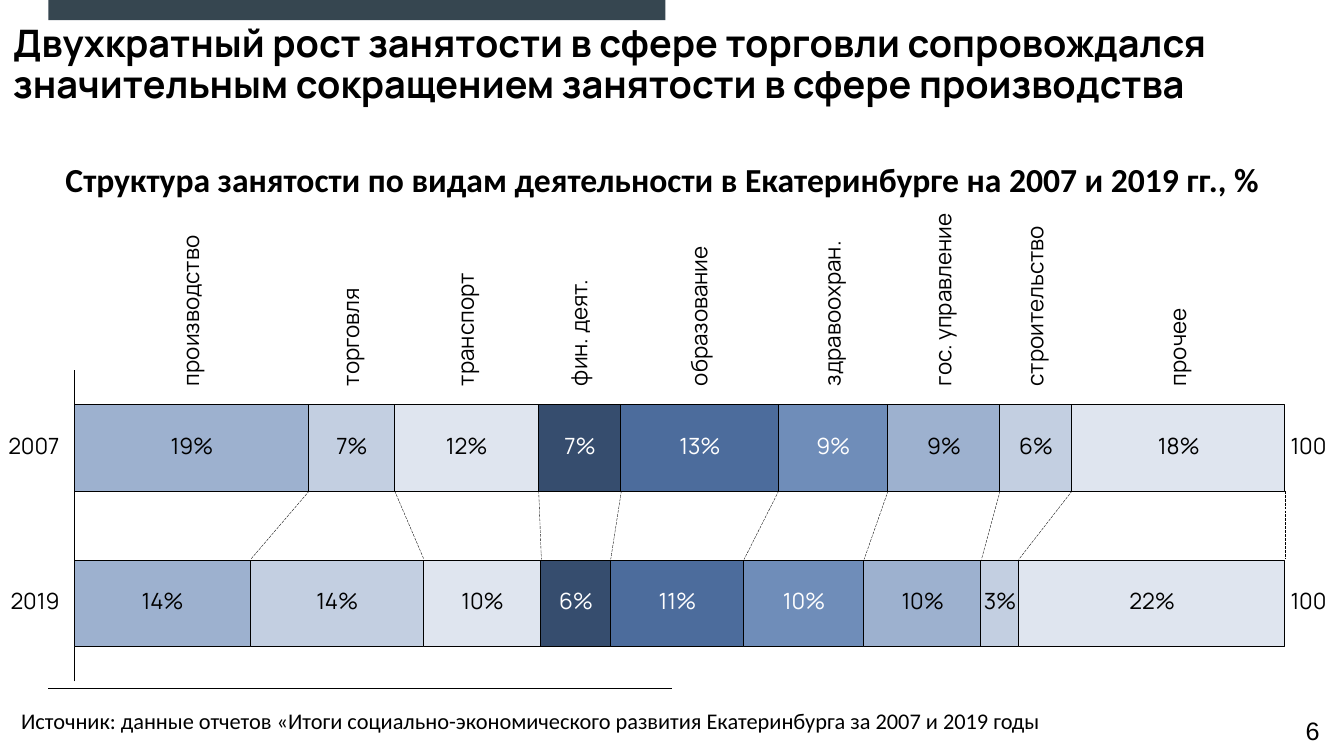
from itertools import accumulate, pairwise

from lxml.etree import SubElement
from pptx import Presentation
from pptx.chart.data import CategoryChartData
from pptx.dml.color import RGBColor
from pptx.enum.chart import XL_CHART_TYPE as CHART, XL_TICK_LABEL_POSITION as TICK_LABEL, XL_TICK_MARK as TICK
from pptx.enum.dml import MSO_LINE
from pptx.enum.shapes import MSO_CONNECTOR, MSO_SHAPE
from pptx.enum.text import MSO_ANCHOR as ANCHOR, PP_ALIGN as ALIGN
from pptx.oxml import parse_xml
from pptx.oxml.ns import nsdecls, qn
from pptx.util import Inches, Pt

BLACK, WHITE = "000000", "FFFFFF"
SECTORS = [
    ("производство", 1.4, 88, 66, "19%", "14%", "9DB1CF", BLACK),
    ("торговля", 0.91, 32, 65, "7%", "14%", "C3CFE1", BLACK),
    ("транспорт", 1.04, 54, 44, "12%", "10%", "DFE5EF", BLACK),
    ("фин. деят.", 1.12, 31, 26, "7%", "6%", "364D6E", WHITE),
    ("образование", 1.3, 59, 50, "13%", "11%", "4C6C9C", WHITE),
    ("здравоохран.", 1.38, 41, 45, "9%", "10%", "6F8DB9", WHITE),
    ("гос. управление", 1.68, 42, 44, "9%", "10%", "9DB1CF", BLACK),
    ("строительство", 1.49, 27, 14, "6%", "3%", "C3CFE1", BLACK),
    ("прочее", 0.73, 80, 100, "18%", "22%", "DFE5EF", BLACK),
]
TOTAL = 454
BAR_LEFT, BAR_WIDTH = 0.74, 12.01
ROW_TOPS = {"2007": 4.32, "2019": 5.86}
LABEL_BOTTOM = 3.83


def rgb(value):
    """Turn a hex string into a colour."""
    return RGBColor.from_string(value)


def write(sp, text, size=16, font="Manrope", color=BLACK, bold=False, align=None,
          anchor=ANCHOR.MIDDLE, spacing=0.9, inset=0.0, pad=0.0, wrap=False):
    """Put one formatted paragraph into a shape."""
    tf = sp.text_frame
    tf.word_wrap = wrap
    tf.vertical_anchor = anchor
    tf.margin_left = tf.margin_right = Inches(inset)
    tf.margin_top = tf.margin_bottom = Inches(pad)
    p = tf.paragraphs[0]
    p.alignment = align
    p.line_spacing = spacing
    r = p.add_run()
    r.text = text
    r.font.size, r.font.name, r.font.bold = Pt(size), font, bold
    r.font.color.rgb = rgb(color)


def add_text(slide, left, top, width, height, text, vert=None, **fmt):
    """Add a text box, turned when vert is given."""
    sp = slide.shapes.add_textbox(Inches(left), Inches(top), Inches(width), Inches(height))
    write(sp, text, **fmt)
    if vert:
        sp.element.txBody.find(qn("a:bodyPr")).set("vert", vert)


def add_line(slide, x1, y1, x2, y2, width, dash=None):
    """Add a thin black line without a shadow."""
    line = slide.shapes.add_connector(
        MSO_CONNECTOR.STRAIGHT, Inches(x1), Inches(y1), Inches(x2), Inches(y2))
    line.line.color.rgb = rgb(BLACK)
    line.line.width = Pt(width)
    if dash:
        line.line.dash_style = dash
    SubElement(line.element.spPr, qn("a:effectLst"))


def add_title(slide, text):
    """Place and fill the title placeholder."""
    sp = slide.shapes.title
    sp.left, sp.top, sp.width, sp.height = map(Inches, (0.13, 0.17, 13.14, 0.97))
    write(sp, text, size=27, bold=True, align=ALIGN.LEFT, wrap=True)


def add_band(slide):
    """Add the dark band at the top edge."""
    sp = slide.shapes.add_shape(
        MSO_SHAPE.RECTANGLE, Inches(0.48), Inches(0), Inches(6.12), Inches(0.2))
    sp.shadow.inherit = False
    sp.fill.solid()
    sp.fill.fore_color.rgb = rgb("364650")
    sp.line.fill.background()


def set_plot_layout(chart, x, y, w, h):
    """Fix the inner plot area as fractions of the chart."""
    area = chart.element.find(".//" + qn("c:plotArea"))
    for old in area.findall(qn("c:layout")):
        area.remove(old)
    sizes = "".join(f'<c:{tag} val="{val}"/>' for tag, val in zip("xywh", (x, y, w, h)))
    area.insert(0, parse_xml(
        f'<c:layout {nsdecls("c")}><c:manualLayout><c:layoutTarget val="inner"/>'
        f'<c:xMode val="edge"/><c:yMode val="edge"/>{sizes}</c:manualLayout></c:layout>'))


def add_bars(slide):
    """Add the stacked bars for both years."""
    data = CategoryChartData()
    data.categories = ["1", "2"]
    for number, sector in enumerate(SECTORS, 1):
        data.add_series(f"Series {number}", sector[2:4])
    chart = slide.shapes.add_chart(
        CHART.BAR_STACKED, Inches(0.65), Inches(3.58), Inches(12.19), Inches(3.27), data).chart
    chart.has_title = chart.has_legend = False
    chart.font.size, chart.font.name = Pt(10), "Arial"
    chart.font.color.rgb = rgb(BLACK)
    cat, val = chart.category_axis, chart.value_axis
    cat.reverse_order = True
    cat.tick_label_position = TICK_LABEL.NONE
    cat.major_tick_mark = cat.minor_tick_mark = TICK.NONE
    cat.format.line.color.rgb = rgb(BLACK)
    cat.format.line.width = Pt(0.75)
    val.minimum_scale, val.maximum_scale = 0, TOTAL
    val.has_major_gridlines = val.visible = False
    plot = chart.plots[0]
    plot.gap_width, plot.overlap, plot.vary_by_categories = 80, 100, False
    for series, sector in zip(plot.series, SECTORS):
        series.format.fill.solid()
        series.format.fill.fore_color.rgb = rgb(sector[6])
        series.format.line.color.rgb = rgb(BLACK)
        series.format.line.width = Pt(0.75)
    set_plot_layout(chart, 0.007, 0.028, 0.985, 0.945)


def bar_edges(column):
    """Return the x of every segment edge of one year's bar."""
    sums = accumulate((sector[column] for sector in SECTORS), initial=0)
    return [BAR_LEFT + BAR_WIDTH * value / TOTAL for value in sums]


def add_row_labels(slide, year, top, edges, column):
    """Label one bar with its year, shares and total."""
    add_text(slide, 0.02, top, 0.57, 0.24, year, align=ALIGN.RIGHT)
    for (x1, x2), sector in zip(pairwise(edges), SECTORS):
        share = sector[column]
        width = 0.2 + 0.12 * len(share)
        add_text(slide, (x1 + x2 - width) / 2, top, width, 0.24, share,
                 color=sector[7], align=ALIGN.CENTER)
    add_text(slide, 12.8, top, 0.5, 0.24, "100", align=ALIGN.LEFT)


def add_sector_names(slide, edges):
    """Write the sector names upright above the first bar."""
    for (x1, x2), (name, length, *_) in zip(pairwise(edges), SECTORS):
        add_text(slide, (x1 + x2) / 2 - 0.12, LABEL_BOTTOM - length, 0.24, length,
                 name, vert="vert270")


def main():
    """Build and save the slide."""
    prs = Presentation()
    prs.slide_width, prs.slide_height = Inches(13.33), Inches(7.5)
    slide = prs.slides.add_slide(prs.slide_layouts[5])
    add_line(slide, 0.48, 6.83, 6.67, 6.83, 0.5)
    add_band(slide)
    add_title(slide, "Двухкратный рост занятости в сфере торговли сопровождался "
                     "значительным сокращением занятости в сфере производства")
    add_text(slide, 12.9, 7.05, 0.37, 0.36, "6", size=18, font="Arial",
             anchor=ANCHOR.TOP, spacing=1.0, inset=0.05, pad=0.05)
    rows = [bar_edges(2), bar_edges(3)]
    for upper, lower in list(zip(*rows))[1:]:
        add_line(slide, upper, 4.87, lower, 5.55, 0.25, MSO_LINE.LONG_DASH)
    add_bars(slide)
    add_sector_names(slide, rows[0])
    for column, ((year, top), edges) in enumerate(zip(ROW_TOPS.items(), rows), 4):
        add_row_labels(slide, year, top, edges, column)
    note = dict(font="Calibri", anchor=ANCHOR.TOP, spacing=1.0, wrap=True)
    add_text(slide, 0.21, 7.02, 10.47, 0.27,
             "Источник: данные отчетов «Итоги социально-экономического развития "
             "Екатеринбурга за 2007 и 2019 годы", **note)
    add_text(slide, 0.65, 1.58, 12.03, 0.4,
             "Структура занятости по видам деятельности в Екатеринбурге на 2007 и 2019 гг., %",
             size=24, bold=True, **note)
    prs.save("out.pptx")


if __name__ == "__main__":
    main()
